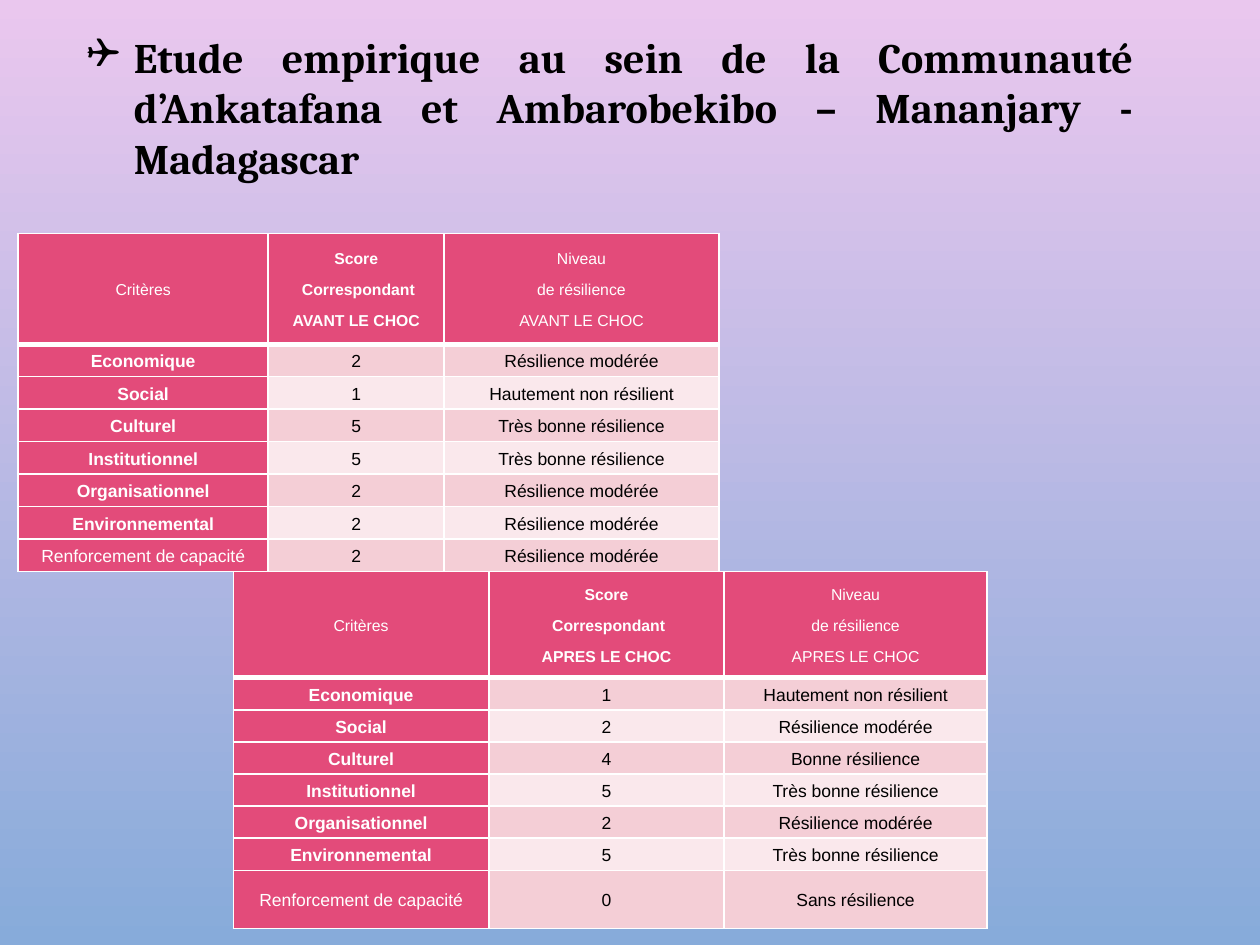
from lxml.etree import SubElement
from pptx import Presentation
from pptx.dml.color import RGBColor
from pptx.enum.text import MSO_ANCHOR as ANCHOR, PP_ALIGN as ALIGN
from pptx.oxml.ns import qn
from pptx.util import Pt

WHITE, BLACK, PINK = "FFFFFF", "000000", "E34B7A"
BANDS = ["F4CED6", "FAE8EC"]
CRITERIA = ["Economique", "Social", "Culturel", "Institutionnel", "Organisationnel",
            "Environnemental", "Renforcement de capacité"]
LEVELS = ["Sans résilience", "Hautement non résilient", "Résilience modérée", None,
          "Bonne résilience", "Très bonne résilience"]


def color(hex_code):
    """Turn a hex string into a colour."""
    return RGBColor.from_string(hex_code)


def set_background(s, top, bottom):
    """Fill the slide with a gradient that runs downwards."""
    fill = s.background.fill
    fill.gradient()
    fill.gradient_angle = 270
    for stop, position, hex_code in zip(fill.gradient_stops, (0, 1), (top, bottom)):
        stop.position = position
        stop.color.rgb = color(hex_code)


def add_title(s, text, x, y, w, h):
    """Add the justified title with its square bullet."""
    tf = s.shapes.add_textbox(Pt(x), Pt(y), Pt(w), Pt(h)).text_frame
    tf.word_wrap = True
    p = tf.paragraphs[0]
    p.text = text
    p.alignment = ALIGN.JUSTIFY
    pPr = p._p.get_or_add_pPr()
    pPr.set("marL", str(Pt(27)))
    pPr.set("indent", str(-Pt(27)))
    bullet_color = SubElement(pPr, qn("a:buClr"))
    SubElement(bullet_color, qn("a:srgbClr"), val=BLACK)
    SubElement(pPr, qn("a:buFont"), typeface="Wingdings")
    SubElement(pPr, qn("a:buChar"), char="❑")
    font = p.runs[0].font
    font.name, font.size, font.bold = "Cambria", Pt(24), True
    font.color.rgb = color(BLACK)


def set_borders(cell, widths):
    """Draw white cell borders; widths are left, right, top and bottom."""
    tcPr = cell._tc.get_or_add_tcPr()
    for side, width in zip("LRTB", widths):
        line = SubElement(tcPr, qn(f"a:ln{side}"), w=str(Pt(width)))
        fill = SubElement(line, qn("a:solidFill"))
        SubElement(fill, qn("a:srgbClr"), val=WHITE)


def fill_cell(cell, text, size, bold, text_color, fill_color):
    """Write centred text in a cell and paint its background."""
    cell.margin_left = cell.margin_right = Pt(5)
    cell.margin_top = cell.margin_bottom = 0
    cell.vertical_anchor = ANCHOR.MIDDLE
    cell.fill.solid()
    cell.fill.fore_color.rgb = color(fill_color)
    cell.text_frame.text = text
    for i, p in enumerate(cell.text_frame.paragraphs):
        p.alignment = ALIGN.CENTER
        p.line_spacing = 1.15
        if i:
            p.space_before = Pt(6)
        font = p.runs[0].font
        font.name, font.size, font.bold = "Arial", Pt(size), bold
        font.color.rgb = color(text_color)


def add_score_table(s, moment, scores, x, y, col_widths, row_heights):
    """Add the table of resilience scores for one moment."""
    header = ["Critères", f"Score\n Correspondant\n{moment}", f"Niveau\nde résilience\n{moment}"]
    rows = [header] + [[name, str(n), LEVELS[n]] for name, n in zip(CRITERIA, scores)]
    table = s.shapes.add_table(len(rows), len(header), Pt(x), Pt(y),
                               Pt(sum(col_widths)), Pt(sum(row_heights))).table
    table.first_row = table.horz_banding = False
    for column, width in zip(table.columns, col_widths):
        column.width = Pt(width)
    for row, height in zip(table.rows, row_heights):
        row.height = Pt(height)
    for i, row in enumerate(rows):
        for j, text in enumerate(row):
            cell = table.cell(i, j)
            set_borders(cell, (1, 1, 3 if i == 1 else 1, 3 if i == 0 else 1))
            if i == 0:
                fill_cell(cell, text, 9, j == 1, WHITE, PINK)
            elif j == 0:
                fill_cell(cell, text, 10, i < len(CRITERIA), WHITE, PINK)
            else:
                fill_cell(cell, text, 10, False, BLACK, BANDS[(i - 1) % 2])


def main():
    """Build the slide."""
    prs = Presentation()
    prs.slide_width, prs.slide_height = Pt(720), Pt(540)
    s = prs.slides.add_slide(prs.slide_layouts[6])
    set_background(s, "EAC7EE", "87ABDA")
    add_score_table(s, "AVANT LE CHOC", [2, 1, 5, 5, 2, 2, 2], 10.3, 133.5,
                    [143, 100.5, 157], [63.2] + [18.55] * 7)
    add_score_table(s, "APRES LE CHOC", [1, 2, 4, 5, 2, 5, 0], 133.3, 326.7,
                    [146, 134.5, 150.2], [60.6] + [18.35] * 6 + [33.3])
    add_title(s, "Etude empirique au sein de la Communauté d’Ankatafana et "
              "Ambarobekibo – Mananjary - Madagascar", 42.5, 14.4, 612, 94.5)
    prs.save("out.pptx")


if __name__ == "__main__":
    main()
